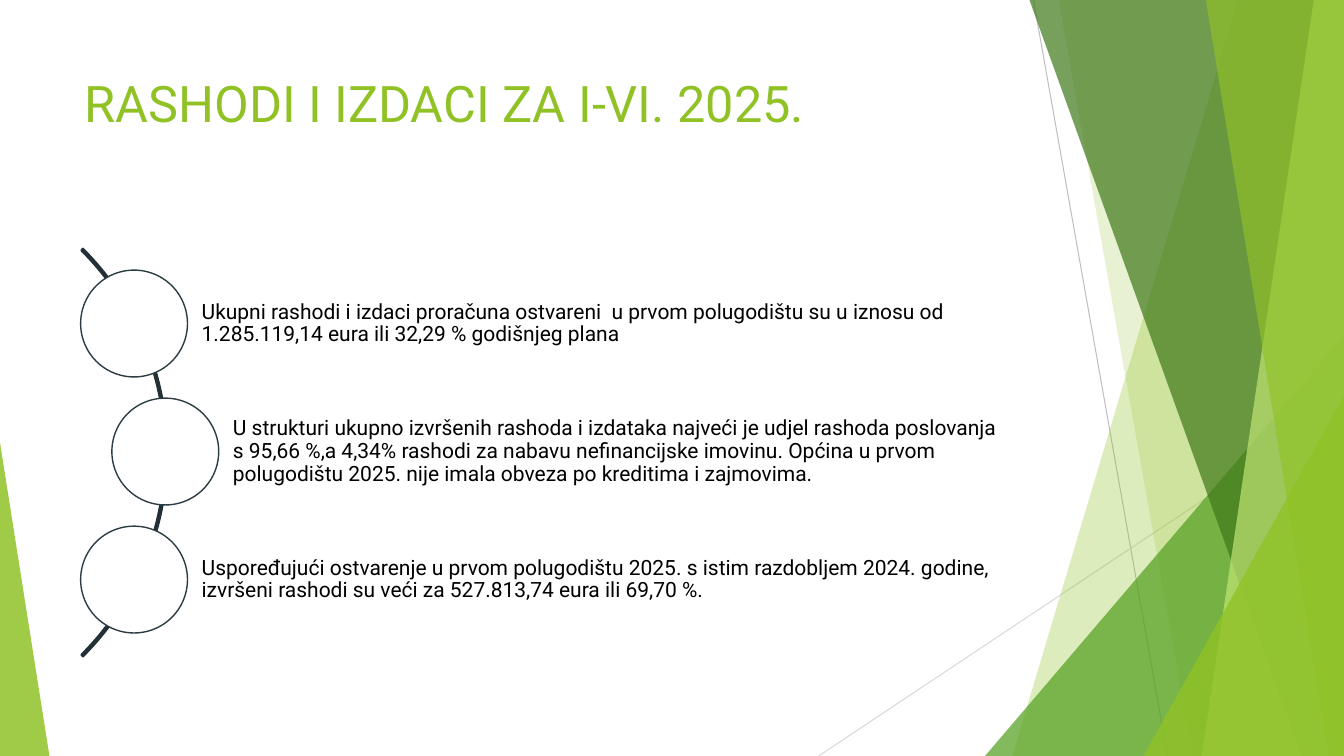
from dataclasses import dataclass

from lxml.etree import SubElement
from pptx import Presentation
from pptx.dml.color import RGBColor
from pptx.enum.shapes import MSO_CONNECTOR, MSO_SHAPE
from pptx.enum.text import MSO_ANCHOR, MSO_AUTO_SIZE, PP_ALIGN
from pptx.oxml.ns import qn
from pptx.shapes.autoshape import Shape
from pptx.slide import Slide
from pptx.util import Inches, Pt

LINE = MSO_CONNECTOR.STRAIGHT
TRIANGLE = MSO_SHAPE.ISOSCELES_TRIANGLE
ARC = MSO_SHAPE.BLOCK_ARC
OVAL = MSO_SHAPE.OVAL
RECT = MSO_SHAPE.RECTANGLE
TOP = MSO_ANCHOR.TOP
MIDDLE = MSO_ANCHOR.MIDDLE
LEFT = PP_ALIGN.LEFT
NO_FIT = MSO_AUTO_SIZE.NONE

WIDTH, HEIGHT = 13.33, 7.5
TITLE = "RASHODI I IZDACI ZA I-VI. 2025."


@dataclass(frozen=True)
class Theme:
    font: str = "Roboto"
    head: int = 36
    body: int = 15
    green: str = "90C226"
    leaf: str = "54A021"
    forest: str = "3F7819"
    lime: str = "C0E474"
    white: str = "FFFFFF"
    black: str = "000000"
    arc: str = "233036"
    ring: str = "2C3C43"
    grey: str = "BFBFBF"
    pale: str = "D9D9D9"


THEME = Theme()


@dataclass(frozen=True)
class Box:
    left: float
    top: float
    width: float
    height: float

    def spans(self) -> tuple:
        return tuple(map(Inches, (self.left, self.top, self.width, self.height)))


@dataclass(frozen=True)
class Ray:
    start: tuple[float, float]
    end: tuple[float, float]
    color: str


@dataclass(frozen=True)
class Band:
    top: float
    foot: float
    color: str
    alpha: int


@dataclass(frozen=True)
class Wedge:
    box: Box
    apex: float
    color: str
    alpha: int


@dataclass(frozen=True)
class Item:
    left: float
    text: str


RAYS = (
    Ray((10.25, 0), (11.58, HEIGHT), THEME.grey),
    Ray((WIDTH, 4.03), (8.12, HEIGHT), THEME.pale),
)
DECOR = (
    Band(12.28, 10.04, THEME.green, 30),
    Band(10.5, 11.83, THEME.green, 20),
    Wedge(Box(9.77, 3.33, 3.56, 4.17), 1, THEME.leaf, 72),
    Band(10.21, 12.91, THEME.forest, 70),
    Band(13.03, 11.92, THEME.lime, 70),
    Band(11.96, 13.18, THEME.green, 65),
    Wedge(Box(11.34, 3.93, 1.99, 3.57), 1, THEME.green, 80),
    Wedge(Box(0, 4.39, 0.49, 3.11), 0, THEME.green, 85),
)
ITEMS = (
    Item(0.8, "Ukupni rashodi i izdaci proračuna ostvareni  u prvom polugodištu su u iznosu od 1.285.119,14 eura ili 32,29 % godišnjeg plana"),
    Item(1.11, "U strukturi ukupno izvršenih rashoda i izdataka najveći je udjel rashoda poslovanja s 95,66 %,a 4,34% rashodi za nabavu nefinancijske imovinu. Općina u prvom polugodištu 2025. nije imala obveza po kreditima i zajmovima."),
    Item(0.8, "Uspoređujući ostvarenje u prvom polugodištu 2025. s istim razdobljem 2024. godine, izvršeni rashodi su veći za 527.813,74 eura ili 69,70 %."),
)
MIDDLE_Y, STEP = 4.48, 1.27
RING, BAR, EDGE = 1.06, 0.85, 10.08


def apply(target: object, values: dict) -> None:
    for name, value in values.items():
        setattr(target, name, value)


def paint(shape: Shape, fill: str = "", line: str = "", width: float = 1, alpha: int = 100) -> None:
    shape.shadow.inherit = False
    if fill:
        shape.fill.solid()
        shape.fill.fore_color.rgb = RGBColor.from_string(fill)
    else:
        shape.fill.background()
    if alpha < 100:
        tint = shape.element.spPr.find(f"{qn('a:solidFill')}/{qn('a:srgbClr')}")
        SubElement(tint, qn("a:alpha")).set("val", str(alpha * 1000))
    if line:
        shape.line.color.rgb = RGBColor.from_string(line)
        shape.line.width = Pt(width)
    else:
        shape.line.fill.background()


def write(shape: Shape, text: str, size: int, color: str, frame: dict, para: dict) -> None:
    shape.text_frame.text = text
    apply(shape.text_frame, {"word_wrap": True, "auto_size": NO_FIT, **frame})
    first = shape.text_frame.paragraphs[0]
    apply(first, {"alignment": LEFT, **para})
    font = first.runs[0].font
    apply(font, {"name": THEME.font, "size": Pt(size)})
    font.color.rgb = RGBColor.from_string(color)


def draw_ray(slide: Slide, ray: Ray) -> None:
    ends = map(Inches, ray.start + ray.end)
    line = slide.shapes.add_connector(LINE, *ends)
    line.line.color.rgb = RGBColor.from_string(ray.color)
    line.line.width = Pt(0.75)
    SubElement(line.element.spPr, qn("a:effectLst"))


def draw_band(slide: Slide, band: Band) -> None:
    outline = ((WIDTH, 0), (WIDTH, HEIGHT), (band.foot, HEIGHT))
    form = slide.shapes.build_freeform(Inches(band.top), 0)
    form.add_line_segments([(Inches(x), Inches(y)) for x, y in outline])
    paint(form.convert_to_shape(), band.color, alpha=band.alpha)


def draw_wedge(slide: Slide, wedge: Wedge) -> None:
    shape = slide.shapes.add_shape(TRIANGLE, *wedge.box.spans())
    shape.adjustments[0] = wedge.apex
    paint(shape, wedge.color, alpha=wedge.alpha)


def draw_title(slide: Slide) -> None:
    title = slide.shapes.title
    spans = Box(0.74, 0.67, 9.4, 1.44).spans()
    apply(title, dict(zip(("left", "top", "width", "height"), spans)))
    write(title, TITLE, THEME.head, THEME.green, {"vertical_anchor": TOP}, {})


def draw_arc(slide: Slide) -> None:
    arc = slide.shapes.add_shape(ARC, *Box(-4.06, 1.63, 5.72, 5.72).spans())
    for place, value in enumerate((189, 27, 0.004)):
        arc.adjustments[place] = value
    paint(arc, line=THEME.arc, width=1.5)


def draw_item(slide: Slide, item: Item, mid: float) -> None:
    left = item.left + RING / 2
    bar = slide.shapes.add_shape(RECT, *Box(left, mid - BAR / 2, EDGE - left, BAR).spans())
    paint(bar, THEME.white)
    thin = Inches(0.04)
    frame = {"vertical_anchor": MIDDLE, "margin_left": Inches(0.67),
             "margin_right": thin, "margin_top": thin, "margin_bottom": thin}
    write(bar, item.text, THEME.body, THEME.black, frame, {"line_spacing": 0.9})
    ring = slide.shapes.add_shape(OVAL, *Box(item.left, mid - RING / 2, RING, RING).spans())
    paint(ring, THEME.white, THEME.ring)


def main() -> None:
    deck = Presentation()
    apply(deck, {"slide_width": Inches(WIDTH), "slide_height": Inches(HEIGHT)})
    slide = deck.slides.add_slide(deck.slide_layouts[5])
    for ray in RAYS:
        draw_ray(slide, ray)
    for part in DECOR:
        draw = draw_band if isinstance(part, Band) else draw_wedge
        draw(slide, part)
    draw_title(slide)
    draw_arc(slide)
    for row, item in enumerate(ITEMS):
        draw_item(slide, item, MIDDLE_Y + (row - 1) * STEP)
    deck.save("out.pptx")


if __name__ == "__main__":
    main()
